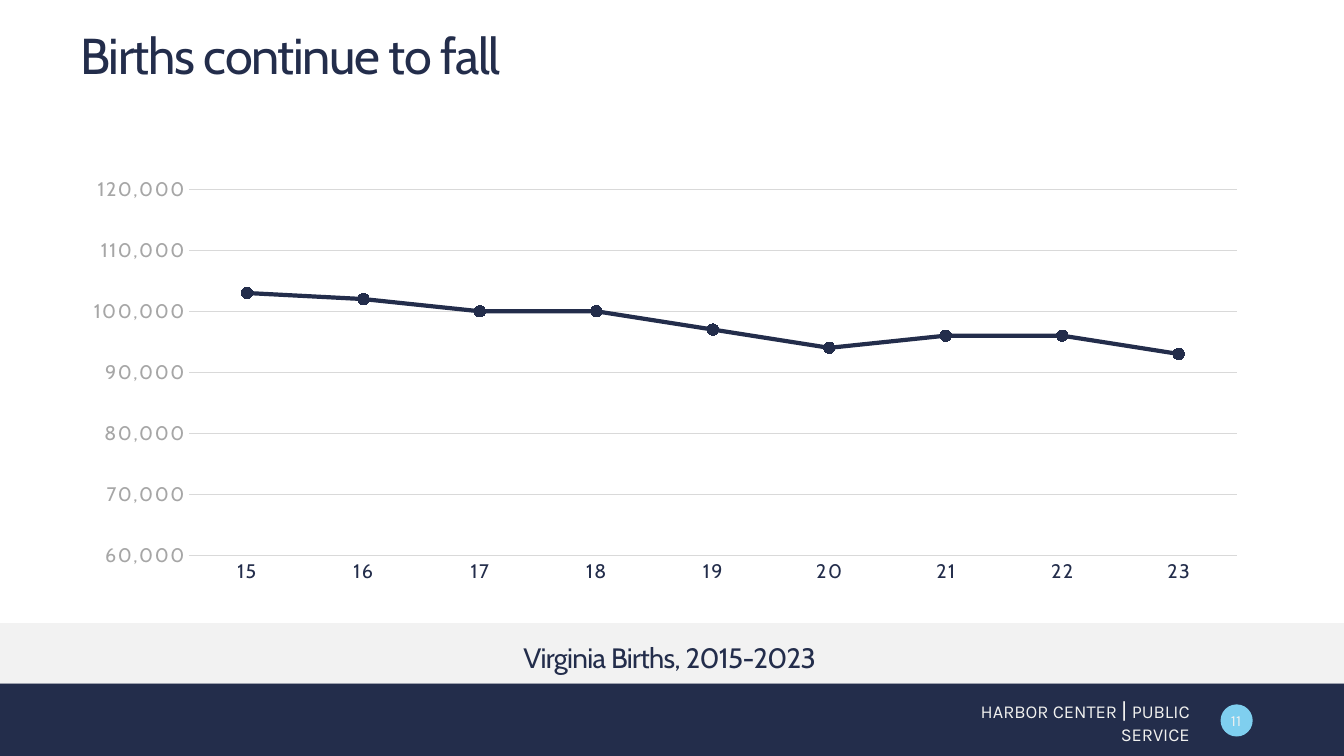
from lxml.etree import SubElement
from pptx import Presentation
from pptx.chart.data import CategoryChartData
from pptx.dml.color import RGBColor
from pptx.enum.chart import XL_CHART_TYPE as ChartType, XL_MARKER_STYLE as MarkerStyle, XL_TICK_MARK as TickMark
from pptx.enum.shapes import MSO_SHAPE as Preset
from pptx.enum.text import MSO_ANCHOR as Anchor, PP_ALIGN as Align
from pptx.oxml.ns import qn
from pptx.util import Cm, Pt

NAVY = RGBColor(0x23, 0x2D, 0x4B)
SKY = RGBColor(0x7F, 0xCF, 0xEF)
PALE = RGBColor(0xF2, 0xF2, 0xF2)
OFF_WHITE = RGBColor(0xF1, 0xF1, 0xEF)
LABEL_GREY = RGBColor(0xA6, 0xA6, 0xA6)
GRID_GREY = RGBColor(0xD9, 0xD9, 0xD9)

WIDTH, HEIGHT = 33.87, 19.05
FOOTER_TOP = 17.22
CAPTION_TOP = 15.7
BIRTHS = {
    "15": 103000, "16": 102000, "17": 100000, "18": 100000, "19": 97000,
    "20": 94000, "21": 96000, "22": 96000, "23": 93000,
}
PLOT_LAYOUT = {
    "layoutTarget": "inner", "xMode": "edge", "yMode": "edge",
    "x": 0.092, "y": 0.055, "w": 0.885, "h": 0.842,
}


def to_cm(box):
    """Turn left, top, width and height numbers into lengths."""
    return [Cm(value) for value in box]


def add_block(slide, preset, box, color):
    """Add a plain filled shape without an outline."""
    shape = slide.shapes.add_shape(preset, *to_cm(box))
    shape.shadow.inherit = False
    shape.fill.solid()
    shape.fill.fore_color.rgb = color
    shape.line.fill.background()


def add_text(slide, box, pieces, font="Cabin", color=NAVY, align=Align.LEFT,
             anchor=Anchor.TOP, line_spacing=1.0, space_before=0, tracking=0, bottom=0.13):
    """Add a one-paragraph text box from (text, size) pieces."""
    frame = slide.shapes.add_textbox(*to_cm(box)).text_frame
    frame.word_wrap = True
    frame.vertical_anchor = anchor
    frame.margin_bottom = Cm(bottom)
    paragraph = frame.paragraphs[0]
    paragraph.alignment = align
    paragraph.line_spacing = line_spacing
    paragraph.space_before = Pt(space_before)
    for text, size in pieces:
        run = paragraph.add_run()
        run.text = text
        run.font.name = font
        run.font.size = Pt(size)
        run.font.color.rgb = color
        if tracking:
            run._r.get_or_add_rPr().set("spc", str(round(tracking * 100)))


def style_line(line, color, width):
    """Set the colour and width of a line."""
    line.color.rgb = color
    line.width = Pt(width)


def style_axis(axis, color):
    """Format the tick labels of an axis and hide its tick marks."""
    axis.major_tick_mark = axis.minor_tick_mark = TickMark.NONE
    font = axis.tick_labels.font
    font.name = "Cabin"
    font.size = Pt(14)
    font.color.rgb = color


def set_plot_layout(chart):
    """Fix the inner plot area inside the chart frame."""
    plot_area = chart.element.find(".//" + qn("c:plotArea"))
    for old_layout in plot_area.findall(qn("c:layout")):
        plot_area.remove(old_layout)
    layout = SubElement(plot_area, qn("c:layout"))
    plot_area.insert(0, layout)
    manual = SubElement(layout, qn("c:manualLayout"))
    for name, value in PLOT_LAYOUT.items():
        SubElement(manual, qn(f"c:{name}")).set("val", str(value))


def add_births_chart(slide, box):
    """Add the line chart of yearly births."""
    data = CategoryChartData(number_format="#,##0")
    data.categories = list(BIRTHS)
    data.add_series("Series 1", list(BIRTHS.values()))
    chart = slide.shapes.add_chart(ChartType.LINE_MARKERS, *to_cm(box), data).chart
    chart.has_legend = False
    chart.has_title = False
    chart.font.name = "Cabin"
    chart.font.size = Pt(14)
    chart.plots[0].vary_by_categories = False

    years, counts = chart.category_axis, chart.value_axis
    style_axis(years, NAVY)
    style_line(years.format.line, GRID_GREY, 0.75)
    style_axis(counts, LABEL_GREY)
    counts.format.line.fill.background()
    counts.minimum_scale, counts.maximum_scale = 60000, 120000
    counts.major_unit = 10000
    counts.tick_labels.number_format = "#,##0"
    counts.tick_labels.number_format_is_linked = False
    style_line(counts.major_gridlines.format.line, GRID_GREY, 0.75)

    series = chart.plots[0].series[0]
    series.smooth = False
    style_line(series.format.line, NAVY, 3)
    series.marker.style = MarkerStyle.CIRCLE
    series.marker.size = 8
    series.marker.format.fill.solid()
    series.marker.format.fill.fore_color.rgb = NAVY
    style_line(series.marker.format.line, NAVY, 0.75)
    set_plot_layout(chart)
    for properties in chart.element.iter(qn("a:defRPr")):
        properties.set("spc", "100")


def main():
    """Build the births slide and save it."""
    presentation = Presentation()
    presentation.slide_width, presentation.slide_height = Cm(WIDTH), Cm(HEIGHT)
    slide = presentation.slides.add_slide(presentation.slide_layouts[6])

    add_block(slide, Preset.RECTANGLE, (0, FOOTER_TOP, WIDTH, HEIGHT - FOOTER_TOP), NAVY)
    add_block(slide, Preset.OVAL, (30.76, 17.75, 0.81, 0.81), SKY)
    add_block(slide, Preset.RECTANGLE, (0, CAPTION_TOP, WIDTH, FOOTER_TOP - CAPTION_TOP), PALE)

    add_text(slide, (1.78, 0.61, 29.79, 1.52), [("Births continue to fall", 36)],
             anchor=Anchor.BOTTOM, line_spacing=0.8, tracking=-1, bottom=0)
    add_text(slide, (23.37, 17.65, 6.86, 1.02),
             [("HARBOR CENTER ", 13), ("|", 16), (" PUBLIC SERVICE", 13)],
             font="Karla", color=OFF_WHITE, align=Align.RIGHT, anchor=Anchor.MIDDLE)
    add_text(slide, (30.58, 17.7, 1.14, 0.89), [("11", 11)],
             font="Karla", color=OFF_WHITE, align=Align.CENTER, anchor=Anchor.MIDDLE)
    add_text(slide, (2.03, 16.1, 29.69, 0.91), [("Virginia Births, 2015-2023", 20)],
             align=Align.CENTER, line_spacing=0.9, space_before=10, tracking=-0.5)
    add_births_chart(slide, (2.01, 4.17, 29.85, 10.95))
    presentation.save("out.pptx")


if __name__ == "__main__":
    main()
